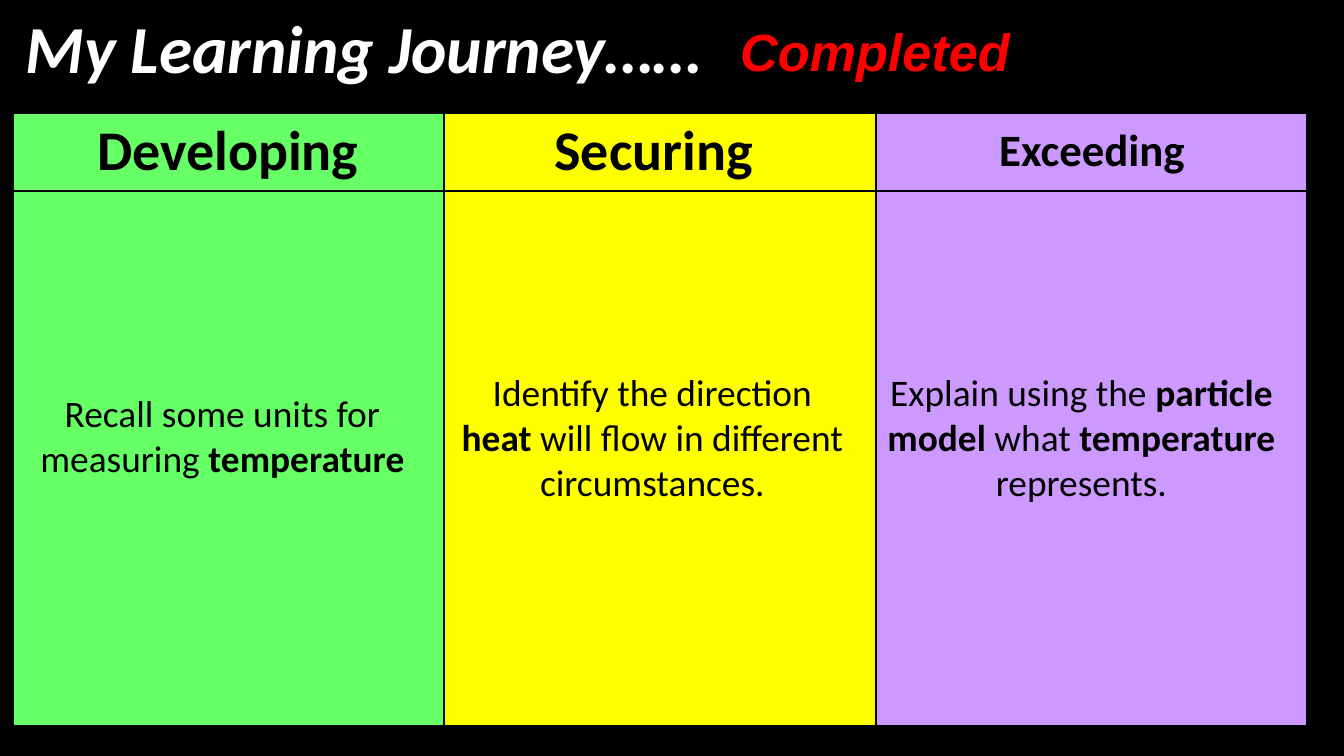
from dataclasses import dataclass
from lxml.etree import SubElement
from pptx import Presentation
from pptx.dml.color import RGBColor
from pptx.enum.text import MSO_ANCHOR as Anchor, MSO_AUTO_SIZE as AutoSize, PP_ALIGN as Align
from pptx.oxml.ns import qn
from pptx.util import Pt


@dataclass(frozen=True)
class Theme:
    black: str = "000000"
    white: str = "FFFFFF"
    red: str = "FF0000"
    green: str = "66FF66"
    yellow: str = "FFFF00"
    purple: str = "CC99FF"
    font: str = "Calibri"
    status_font: str = "Arial"
    title: int = 36
    status: int = 28
    heading: int = 30
    small_heading: int = 24
    goal: int = 20
    outer_line: float = 2.25
    inner_line: float = 1


theme = Theme()
PX = 914400 / 134.4


def px(*lengths):
    return [round(length * PX) for length in lengths]


def write(frame, text, size, font=theme.font, color=theme.black,
          bold=False, italic=False, align=Align.CENTER, anchor=Anchor.TOP):
    frame.word_wrap = True
    frame.vertical_anchor = anchor
    paragraph = frame.paragraphs[0]
    paragraph.alignment = align
    for index, part in enumerate(text.split("*")):
        if part:
            run = paragraph.add_run()
            run.text = part
            run.font.name = font
            run.font.size = Pt(size)
            run.font.bold = bold or index % 2 == 1
            run.font.italic = italic
            run.font.color.rgb = RGBColor.from_string(color)


deck = Presentation()
deck.slide_width, deck.slide_height = px(1344, 756)
slide = deck.slides.add_slide(deck.slide_layouts[5])
slide.background.fill.solid()
slide.background.fill.fore_color.rgb = RGBColor.from_string(theme.black)

title = slide.shapes.title
title.left, title.top, title.width, title.height = px(12, 0, 965, 190)
title.text_frame.auto_size = AutoSize.NONE
write(title.text_frame, "My Learning Journey……", theme.title, color=theme.white,
      bold=True, italic=True, align=Align.LEFT)

levels = [
    ("Developing", theme.heading, theme.green),
    ("Securing ", theme.heading, theme.yellow),
    ("Exceeding", theme.small_heading, theme.purple),
]
row_heights = px(79, 536)
journey = slide.shapes.add_table(2, 3, *px(12, 112, 1296, 615)).table
journey.first_row = journey.horz_banding = False
for row, height in zip(journey.rows, row_heights):
    row.height = height
for column, (heading, size, color) in enumerate(levels):
    journey.columns[column].width = px(432)[0]
    for row in range(2):
        cell = journey.cell(row, column)
        cell.margin_left, cell.margin_right, cell.margin_top, cell.margin_bottom = px(9, 9, 5, 5)
        outer_sides = {"lnL": column == 0, "lnR": column == 2, "lnT": row == 0, "lnB": row == 1}
        for side, outer in outer_sides.items():
            border = SubElement(cell._tc.get_or_add_tcPr(), qn(f"a:{side}"),
                                w=str(Pt(theme.outer_line if outer else theme.inner_line)))
            SubElement(SubElement(border, qn("a:solidFill")), qn("a:srgbClr"), val=theme.black)
        cell.fill.solid()
        cell.fill.fore_color.rgb = RGBColor.from_string(color)
    heading_cell = journey.cell(0, column)
    heading_cell.vertical_anchor = Anchor.MIDDLE
    write(heading_cell.text_frame, heading, size, bold=True, anchor=Anchor.MIDDLE)

goals = [
    (12, 384, 103, "Recall some units for measuring *temperature*"),
    (442, 363, 149, "Identify the direction *heat* will flow in different circumstances."),
    (871, 363, 149, "Explain using the *particle model* what *temperature* represents."),
]
for left, top, height, goal in goals:
    goal_box = slide.shapes.add_textbox(*px(left, top, 421, height))
    write(goal_box.text_frame, goal, theme.goal)

status = slide.shapes.add_textbox(*px(727, 13, 367, 77))
write(status.text_frame, "Completed", theme.status, font=theme.status_font,
      color=theme.red, bold=True, italic=True, align=Align.LEFT)

deck.save("out.pptx")
